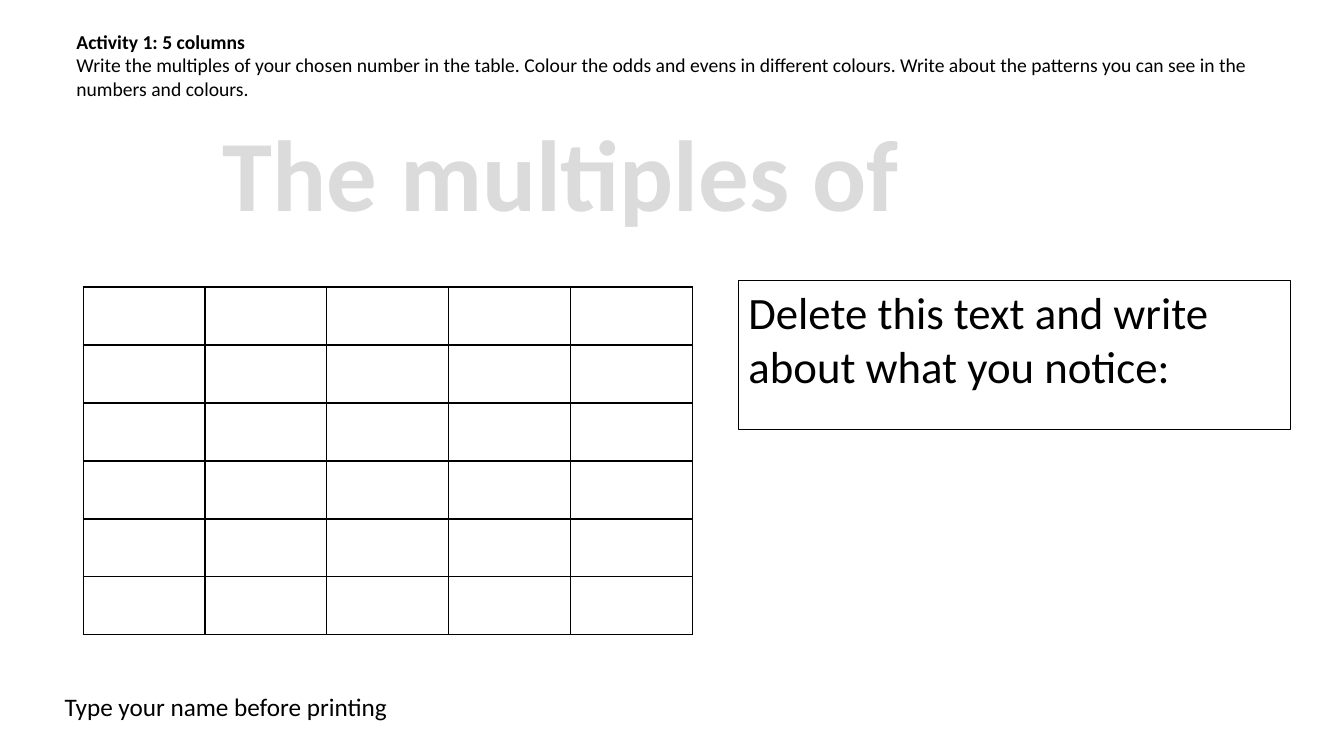
import pptx
import pptx.dml.color
import pptx.enum.shapes
import pptx.enum.text
import pptx.oxml
import pptx.oxml.ns
import pptx.util

Pt = pptx.util.Pt
ALIGN = pptx.enum.text.PP_ALIGN
BLACK = pptx.dml.color.RGBColor(0x00, 0x00, 0x00)
PALE_GREY = pptx.dml.color.RGBColor(0xDB, 0xDB, 0xDB)

INSTRUCTION = {"name": "Calibri", "size": Pt(14), "bold": False}
ACTIVITY = {**INSTRUCTION, "bold": True}
HEADING = {"name": "Calibri", "size": Pt(72), "bold": True}
PROMPT = {"name": "Calibri", "size": Pt(32), "bold": False}
NAME_LINE = {"name": "Calibri", "size": Pt(18), "bold": False}

GRID_ROWS, GRID_COLUMNS = 6, 5
BORDER_WIDTH = Pt(1)


def write_lines(holder, lines, align=ALIGN.LEFT, color=BLACK, wrap=True):
    """Fill a text holder with (text, format) lines, starting at the top."""
    frame = holder.text_frame
    settings = {
        "word_wrap": wrap,
        "auto_size": pptx.enum.text.MSO_AUTO_SIZE.NONE,
        "vertical_anchor": pptx.enum.text.MSO_ANCHOR.TOP,
        "margin_left": Pt(7.2),
        "margin_right": Pt(7.2),
        "margin_top": Pt(3.6),
        "margin_bottom": Pt(3.6),
    }
    for key, value in settings.items():
        setattr(frame, key, value)
    for index, (text, style) in enumerate(lines):
        paragraph = frame.add_paragraph() if index else frame.paragraphs[0]
        paragraph.alignment = align
        run = paragraph.add_run()
        run.text = text
        for key, value in style.items():
            setattr(run.font, key, value)
        run.font.color.rgb = color


def add_instructions(slide, left, top, width, height):
    instructions = slide.shapes.add_textbox(Pt(left), Pt(top), Pt(width), Pt(height))
    write_lines(instructions, [
        ("Activity 1: 5 columns", ACTIVITY),
        ("Write the multiples of your chosen number in the table. "
         "Colour the odds and evens in different colours. "
         "Write about the patterns you can see in the numbers and colours.",
         INSTRUCTION),
    ])


def place_heading(slide, left, top, width, height):
    heading = slide.shapes.title
    box = {"left": left, "top": top, "width": width, "height": height}
    for key, value in box.items():
        setattr(heading, key, Pt(value))
    write_lines(heading, [("The multiples of", HEADING)], ALIGN.CENTER, PALE_GREY)


def outline_cell(cell):
    """Clear the cell's fill and draw all four borders."""
    cell.fill.background()
    properties = cell._tc.get_or_add_tcPr()
    for position, side in enumerate(("lnL", "lnR", "lnT", "lnB")):
        border = pptx.oxml.parse_xml(
            f'<a:{side} {pptx.oxml.ns.nsdecls("a")} w="{BORDER_WIDTH}">'
            f'<a:solidFill><a:srgbClr val="{BLACK}"/></a:solidFill></a:{side}>')
        properties.insert(position, border)


def add_multiples_grid(slide, left, top, width, height):
    grid = slide.shapes.add_table(
        GRID_ROWS, GRID_COLUMNS, Pt(left), Pt(top), Pt(width), Pt(height)).table
    grid.first_row = False
    grid.horz_banding = False
    for column in grid.columns:
        column.width = Pt(width / GRID_COLUMNS)
    for row in grid.rows:
        row.height = Pt(height / GRID_ROWS)
    for cell in grid.iter_cells():
        outline_cell(cell)


def add_notice_box(slide, left, top, width, height):
    notice = slide.shapes.add_shape(
        pptx.enum.shapes.MSO_SHAPE.RECTANGLE,
        Pt(left), Pt(top), Pt(width), Pt(height))
    notice.shadow.inherit = False
    notice.fill.background()
    notice.line.color.rgb = BLACK
    notice.line.width = Pt(0.75)
    write_lines(notice, [("Delete this text and write about what you notice:", PROMPT)])


def add_name_line(slide, left, top, width, height):
    name_line = slide.shapes.add_textbox(Pt(left), Pt(top), Pt(width), Pt(height))
    write_lines(name_line, [("Type your name before printing", NAME_LINE)], wrap=False)


def main():
    deck = pptx.Presentation()
    deck.slide_width = Pt(960)
    deck.slide_height = Pt(540)
    title_only = deck.slide_layouts[5]
    worksheet = deck.slides.add_slide(title_only)

    # Top: instructions and heading
    add_instructions(worksheet, 47.5, 17.5, 885.5, 58)
    place_heading(worksheet, 39, 75.5, 723, 94.5)

    # Middle: grid to fill in, and box for observations
    add_multiples_grid(worksheet, 59.5, 205, 435, 248.5)
    add_notice_box(worksheet, 527.5, 200, 394, 106.5)

    # Bottom: pupil's name
    add_name_line(worksheet, 39, 490.5, 247.5, 29)

    deck.save("out.pptx")


if __name__ == "__main__":
    main()
